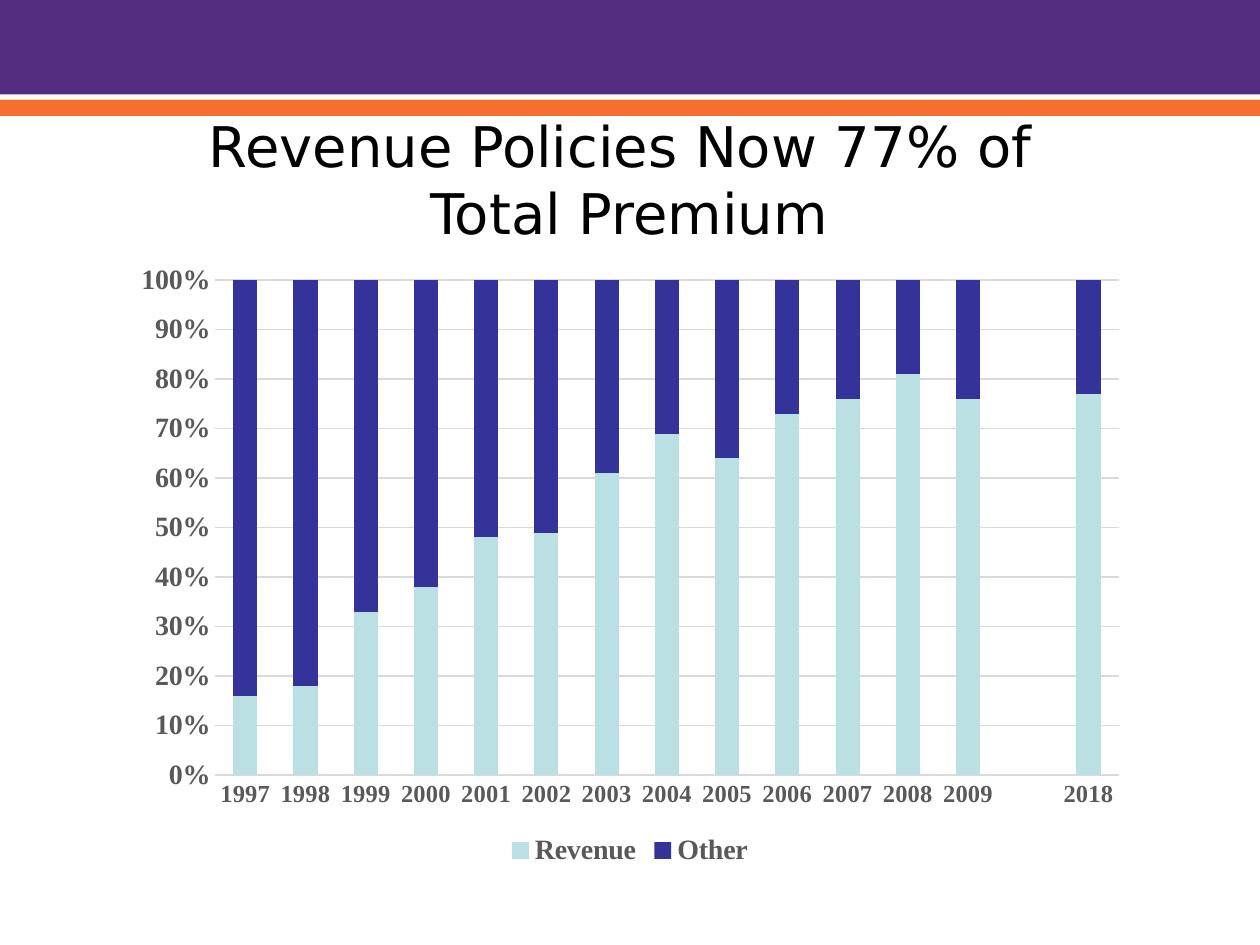
from pptx import Presentation
from pptx.chart.data import CategoryChartData
from pptx.dml.color import RGBColor
from pptx.enum.chart import XL_CHART_TYPE, XL_LEGEND_POSITION, XL_TICK_MARK
from pptx.enum.shapes import MSO_SHAPE
from pptx.enum.text import MSO_ANCHOR, MSO_AUTO_SIZE, PP_ALIGN
from pptx.util import Inches, Pt

PURPLE = RGBColor(0x52, 0x2D, 0x80)
ORANGE = RGBColor(0xF4, 0x70, 0x2F)
BLACK = RGBColor(0, 0, 0)
GRAY = RGBColor(0x59, 0x59, 0x59)
PALE = RGBColor(0xD9, 0xD9, 0xD9)
AQUA = RGBColor(0xBB, 0xE0, 0xE3)
NAVY = RGBColor(0x33, 0x33, 0x99)
SERIF = "Times New Roman"


def style(font, name=SERIF, size=16, color=GRAY, bold=True):
    font.name, font.size, font.bold = name, Pt(size), bold
    font.color.rgb = color


def write(frame, text, align=PP_ALIGN.CENTER, **look):
    frame.text = text
    for para in frame.paragraphs:
        para.alignment = align
        for run in para.runs:
            style(run.font, **look)


deck = Presentation()
deck.slide_width, deck.slide_height = Inches(10), Inches(7.5)
slide = deck.slides.add_slide(deck.slide_layouts[5])

# Header bands across the full width
for top, tall, color in ((0, 0.75, PURPLE), (0.79, 0.13, ORANGE)):
    band = slide.shapes.add_shape(
        MSO_SHAPE.RECTANGLE, 0, Inches(top), deck.slide_width, Inches(tall))
    band.shadow.inherit = False
    band.fill.solid()
    band.fill.fore_color.rgb = color
    band.line.fill.background()

title = slide.shapes.title
title.left, title.top = Inches(0.25), Inches(1.08)
title.width, title.height = Inches(9.49), Inches(0.67)
frame = title.text_frame
frame.word_wrap = True
frame.auto_size = MSO_AUTO_SIZE.NONE
frame.vertical_anchor = MSO_ANCHOR.MIDDLE
write(frame, "Revenue Policies Now 77% of \vTotal Premium",
      name="DejaVu Sans", size=32, color=BLACK, bold=False)

# Share of premium by year; the blank category marks the gap before 2018
share = [16, 18, 33, 38, 48, 49, 61, 69, 64, 73, 76, 81, 76, None, 77]
data = CategoryChartData(number_format="#,##0")
data.categories = [str(year) for year in range(1997, 2010)] + ["", "2018"]
data.add_series("Revenue", share)
data.add_series("Other", [None if v is None else 100 - v for v in share])
chart = slide.shapes.add_chart(
    XL_CHART_TYPE.COLUMN_STACKED_100, Inches(0.96), Inches(2),
    Inches(8.08), Inches(4.92), data).chart
style(chart.font, color=BLACK)
chart.has_title = False

plot = chart.plots[0]
plot.gap_width, plot.overlap = 150, 100
plot.vary_by_categories = False
for series, color in zip(plot.series, (AQUA, NAVY)):
    series.format.fill.solid()
    series.format.fill.fore_color.rgb = color

years, scale = chart.category_axis, chart.value_axis
for axis, size in ((years, 14), (scale, 16)):
    axis.major_tick_mark = axis.minor_tick_mark = XL_TICK_MARK.NONE
    style(axis.tick_labels.font, size=size)
scale.minimum_scale, scale.maximum_scale, scale.major_unit = 0, 1, 0.1
scale.tick_labels.number_format = "0%"
scale.tick_labels.number_format_is_linked = False
scale.has_major_gridlines = True
scale.format.line.fill.background()
for line in (years.format.line, scale.major_gridlines.format.line):
    line.color.rgb = PALE
    line.width = Pt(0.75)

chart.has_legend = True
chart.legend.position = XL_LEGEND_POSITION.BOTTOM
chart.legend.include_in_layout = False
style(chart.legend.font)

deck.save("out.pptx")
